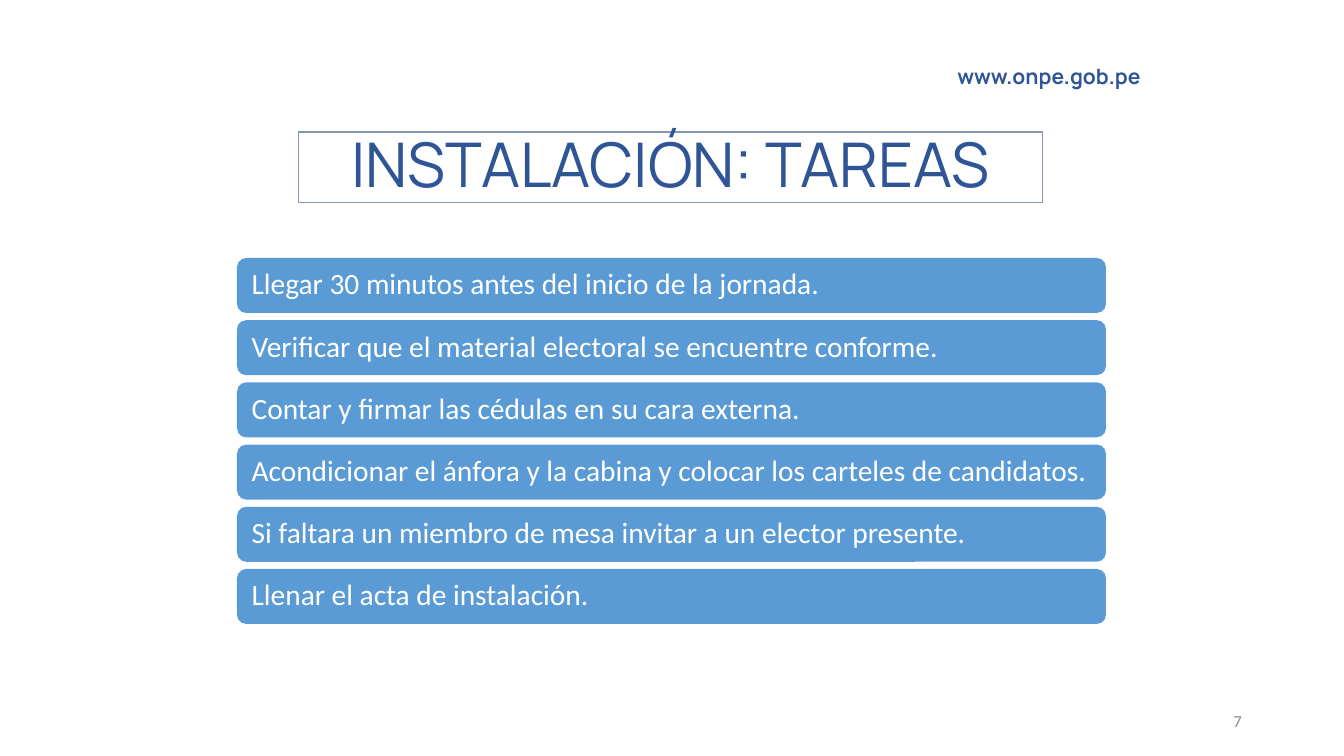
from pptx import Presentation
from pptx.dml.color import RGBColor
from pptx.enum.shapes import MSO_SHAPE
from pptx.enum.text import MSO_ANCHOR, MSO_AUTO_SIZE, PP_ALIGN
from pptx.util import Pt

ROUNDED = MSO_SHAPE.ROUNDED_RECTANGLE
MIDDLE = MSO_ANCHOR.MIDDLE
NO_FIT = MSO_AUTO_SIZE.NONE
LEFT, CENTER, RIGHT = PP_ALIGN.LEFT, PP_ALIGN.CENTER, PP_ALIGN.RIGHT

# Content
TITLE = "INSTALACIÓN: TAREAS"
WEB_ADDRESS = "www.onpe.gob.pe"
PAGE_NUMBER = "7"
TASKS = [
    "Llegar 30 minutos antes del inicio de la jornada.",
    "Verificar que el material electoral se encuentre conforme.",
    "Contar y firmar las cédulas en su cara externa.",
    "Acondicionar el ánfora y la cabina y colocar los carteles de candidatos.",
    "Si faltara un miembro de mesa invitar a un elector presente.",
    "Llenar el acta de instalación.",
]

# Look and layout, lengths in px
NAVY, BLUE, SLATE, GRAY, WHITE = "2F5597", "5B9BD5", "8497B0", "8C8C8C", "FFFFFF"
EMU_PER_PX = 914400 / 100.8
PAGE_SIZE = (1344, 756)
TITLE_BOX = (299, 132, 744, 71)
ADDRESS_BOX = (937, 60, 224, 32)
NUMBER_BOX = (950, 701, 302, 40)
BAR_LEFT, BAR_WIDTH, BAR_HEIGHT = 237, 869, 55
FIRST_TOP, LAST_TOP = 258, 569
BAR_INSET = 12


def px(length):
    return round(length * EMU_PER_PX)


def color(code):
    return RGBColor.from_string(code)


def write(shape, text, font, size, ink, align, bold=False, spacing=1.0):
    frame = shape.text_frame
    frame.word_wrap = True
    frame.auto_size = NO_FIT
    frame.vertical_anchor = MIDDLE
    para = frame.paragraphs[0]
    para.text = text
    para.alignment = align
    para.line_spacing = spacing
    para.font.name = font
    para.font.size = Pt(size)
    para.font.bold = bold
    para.font.color.rgb = color(ink)
    return frame


def add_text(page, place, *style, **options):
    box = page.shapes.add_textbox(*map(px, place))
    write(box, *style, **options)


def main():
    deck = Presentation()
    deck.slide_width, deck.slide_height = map(px, PAGE_SIZE)
    page = deck.slides.add_slide(deck.slide_layouts[5])

    # Framed title
    title = page.shapes.title
    title.left, title.top, title.width, title.height = map(px, TITLE_BOX)
    title.line.color.rgb = color(SLATE)
    title.line.width = Pt(0.75)
    write(title, TITLE, "Manrope", 44, NAVY, CENTER, spacing=0.9)

    # Web address
    add_text(page, ADDRESS_BOX, WEB_ADDRESS, "Manrope", 15, NAVY, CENTER, bold=True)

    # Task bars, evenly spaced from first to last
    pitch = (LAST_TOP - FIRST_TOP) / (len(TASKS) - 1)
    for row, task in enumerate(TASKS):
        place = (BAR_LEFT, FIRST_TOP + row * pitch, BAR_WIDTH, BAR_HEIGHT)
        bar = page.shapes.add_shape(ROUNDED, *map(px, place))
        bar.shadow.inherit = False
        bar.fill.solid()
        bar.fill.fore_color.rgb = color(BLUE)
        bar.line.fill.background()
        frame = write(bar, task, "Calibri", 21, WHITE, LEFT, spacing=0.9)
        frame.margin_left = frame.margin_right = px(BAR_INSET)

    # Page number
    add_text(page, NUMBER_BOX, PAGE_NUMBER, "Calibri", 12, GRAY, RIGHT)

    deck.save("out.pptx")


if __name__ == "__main__":
    main()
